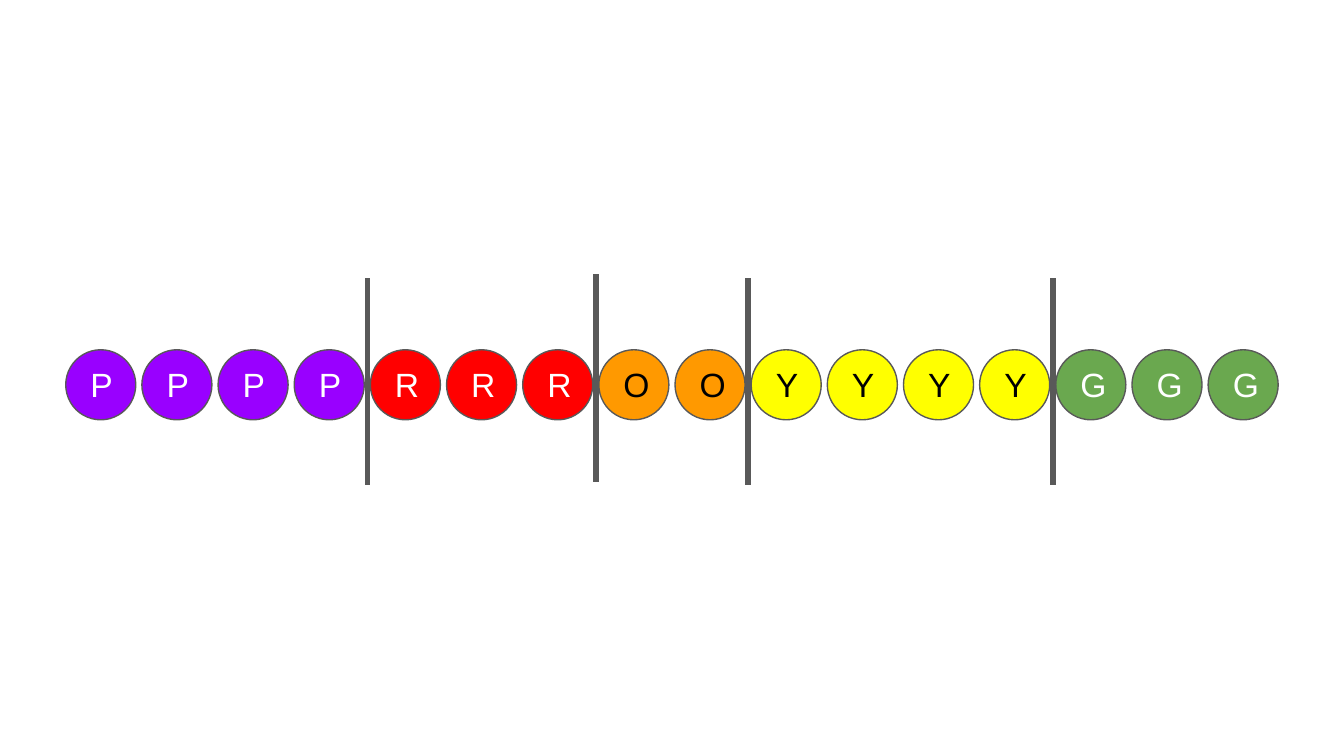
from dataclasses import dataclass

from pptx import Presentation
from pptx import util as u
from pptx.dml.color import RGBColor
from pptx.enum import shapes, text
from pptx.oxml import parse_xml
from pptx.oxml.ns import nsdecls


@dataclass(frozen=True)
class Theme:
    font: str = "Arial"
    size: float = 18
    light: str = "FFFFFF"
    dark: str = "000000"
    line: str = "595959"
    purple: str = "9900FF"
    red: str = "FF0000"
    orange: str = "FF9900"
    yellow: str = "FFFF00"
    green: str = "6AA84F"
    outline: float = 0.75
    divider: float = 3


class Board:
    """Draw on a slide in square cells, with rows counted from the axis of the circles."""

    def __init__(self, prs, theme, columns):
        self.s = prs.slides.add_slide(prs.slide_layouts[6])
        self.theme = theme
        self.cell = prs.slide_width * 0.85 / (columns - 1)
        self.left = (prs.slide_width - self.cell * columns) / 2
        self.axis = prs.slide_height / 2 + self.cell * 0.09

    def x(self, col):
        return round(self.left + col * self.cell)

    def y(self, row):
        return round(self.axis + row * self.cell)

    def span(self, cells):
        return round(cells * self.cell)

    def circle(self, col, fill, diameter=0.92):
        size = self.span(diameter)
        sp = self.s.shapes.add_shape(
            shapes.MSO_SHAPE.OVAL,
            self.x(col + (1 - diameter) / 2), self.y(-diameter / 2), size, size)
        sp.shadow.inherit = False
        sp.fill.solid()
        sp.fill.fore_color.rgb = RGBColor.from_string(fill)
        sp.line.color.rgb = RGBColor.from_string(self.theme.line)
        sp.line.width = u.Pt(self.theme.outline)

    def letter(self, col, label, color):
        sp = self.s.shapes.add_textbox(
            self.x(col + 0.19), self.y(-0.45), self.span(0.6), self.span(0.67))
        tf = sp.text_frame
        tf.word_wrap = True
        tf.vertical_anchor = text.MSO_ANCHOR.TOP
        tf.margin_left = tf.margin_right = tf.margin_top = tf.margin_bottom = u.Inches(0.1)
        tf.text = label
        font = tf.paragraphs[0].runs[0].font
        font.name = self.theme.font
        font.size = u.Pt(self.theme.size)
        font.color.rgb = RGBColor.from_string(color)

    def divider(self, col, top, length=2.72):
        sp = self.s.shapes.add_connector(
            shapes.MSO_CONNECTOR.STRAIGHT,
            self.x(col), self.y(top), self.x(col), self.y(top + length))
        sp.line.color.rgb = RGBColor.from_string(self.theme.line)
        sp.line.width = u.Pt(self.theme.divider)
        sp._element.spPr.append(parse_xml(f"<a:effectLst {nsdecls('a')}/>"))


def main():
    theme = Theme()
    groups = [
        ("P", 4, theme.purple, theme.light),
        ("R", 3, theme.red, theme.light),
        ("O", 2, theme.orange, theme.dark),
        ("Y", 4, theme.yellow, theme.dark),
        ("G", 3, theme.green, theme.light),
    ]
    divider_tops = [-1.4, -1.45, -1.4, -1.4]

    prs = Presentation()
    prs.slide_width = u.Inches(10)
    prs.slide_height = prs.slide_width * 9 // 16
    board = Board(prs, theme, sum(count for _, count, _, _ in groups))

    col = 0
    group_ends = []
    for label, count, fill, color in groups:
        for _ in range(count):
            board.circle(col, fill)
            board.letter(col, label, color)
            col += 1
        group_ends.append(col)

    for end, top in zip(group_ends, divider_tops):
        board.divider(end, top)

    prs.save("out.pptx")


if __name__ == "__main__":
    main()
